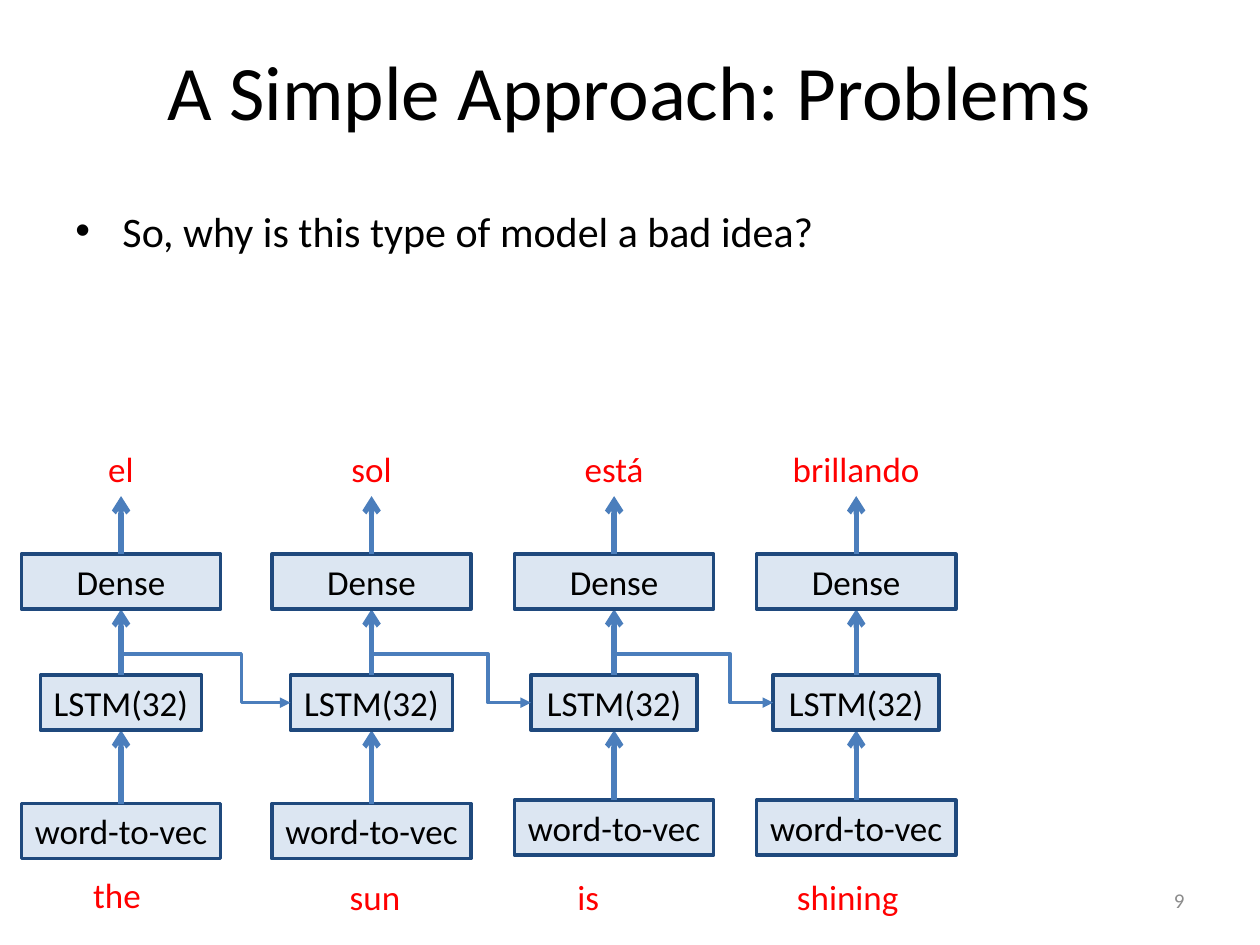
from dataclasses import dataclass

import pptx
import pptx.dml.color
import pptx.enum.shapes
import pptx.enum.text
import pptx.oxml
import pptx.oxml.ns
import pptx.util
from pptx.util import Cm

RGB = pptx.dml.color.RGBColor
ALIGN = pptx.enum.text.PP_ALIGN
ANCHOR = pptx.enum.text.MSO_ANCHOR
FIT = pptx.enum.text.MSO_AUTO_SIZE
LINK = pptx.enum.shapes.MSO_CONNECTOR
RECTANGLE = pptx.enum.shapes.MSO_SHAPE.RECTANGLE


@dataclass(frozen=True)
class Theme:
    font: str = "Calibri"
    ink: RGB = RGB(0x00, 0x00, 0x00)
    word: RGB = RGB(0xFF, 0x00, 0x00)
    muted: RGB = RGB(0x8C, 0x8C, 0x8C)
    layer_fill: RGB = RGB(0xDC, 0xE6, 0xF2)
    layer_line: RGB = RGB(0x1F, 0x49, 0x7D)
    flow: RGB = RGB(0x4B, 0x7E, 0xBC)
    title_size: int = 44
    body_size: int = 24
    label_size: int = 20
    number_size: int = 12


theme = Theme()
deck = pptx.Presentation()
deck.slide_width, deck.slide_height = Cm(25.4), Cm(19.05)
slide = deck.slides.add_slide(deck.slide_layouts[6])


def write(box, text, size, color, align=ALIGN.CENTER, anchor=ANCHOR.TOP, wrap=True):
    frame = box.text_frame
    frame.text = text
    frame.word_wrap = wrap
    frame.vertical_anchor = anchor
    para = frame.paragraphs[0]
    para.alignment = align
    font = para.runs[0].font
    font.name, font.size = theme.font, pptx.util.Pt(size)
    font.color.rgb = color
    return para


def connect(kind, start, end, width, head, bend=None):
    """Draw a flow arrow between two (x, y) points in cm; bend places the elbow, 0 to 1."""
    line = slide.shapes.add_connector(kind, *map(Cm, start + end))
    line.line.color.rgb = theme.flow
    line.line.width = pptx.util.Pt(width)
    properties = line._element.spPr
    tail = pptx.oxml.parse_xml(f'<a:tailEnd {pptx.oxml.ns.nsdecls("a")} type="{head}"/>')
    line.line._get_or_add_ln().append(tail)
    properties.append(pptx.oxml.parse_xml(f'<a:effectLst {pptx.oxml.ns.nsdecls("a")}/>'))
    if bend is not None:
        guides = properties.find(pptx.oxml.ns.qn("a:prstGeom")).get_or_add_avLst()
        guides.append(pptx.oxml.parse_xml(
            f'<a:gd {pptx.oxml.ns.nsdecls("a")} name="adj1" fmla="val {round(bend * 100000)}"/>'))


# Title, question and slide number
title = slide.shapes.add_textbox(Cm(1.27), Cm(0.43), Cm(22.86), Cm(2.74))
write(title, "A Simple Approach: Problems", theme.title_size, theme.ink, anchor=ANCHOR.MIDDLE)

body = slide.shapes.add_textbox(Cm(1.27), Cm(4.01), Cm(22.86), Cm(4.72))
question = write(body, "So, why is this type of model a bad idea?",
                 theme.body_size, theme.ink, ALIGN.LEFT)
question.space_before = pptx.util.Pt(4.8)
bullet = question._p.get_or_add_pPr()
bullet.set("marL", str(Cm(0.95)))
bullet.set("indent", str(-Cm(0.95)))
for tag in ('buFont {} typeface="Arial"', 'buChar {} char="•"'):
    bullet.append(pptx.oxml.parse_xml(f'<a:{tag.format(pptx.oxml.ns.nsdecls("a"))}/>'))

number = slide.shapes.add_textbox(Cm(18.2), Cm(17.65), Cm(5.93), Cm(1.01))
write(number, "9", theme.number_size, theme.muted, ALIGN.RIGHT, ANCHOR.MIDDLE)

# One column per time step, all lengths in cm:
# centre, LSTM width, embedding top, source (word, centre, width, top), target (word, width)
steps = [
    (2.44, 3.25, 16.2, ("the", 2.36, 1.47, 17.48), ("el", 1.04)),
    (7.49, 3.27, 16.2, ("sun", 7.56, 1.55, 17.53), ("sol", 1.32)),
    (12.38, 3.35, 16.13, ("is", 11.86, 0.97, 17.53), ("está", 1.73)),
    (17.26, 3.35, 16.13, ("shining", 17.09, 2.59, 17.53), ("brillando", 3.1)),
]
row_height = 1.11
layer_width = 4.02
target_top, dense_top, lstm_top = 8.89, 11.17, 13.61
branch_y = 13.18
state_y = lstm_top + row_height / 2
bends = [0.71, 0.73, 0.73]

for center, lstm_width, embedding_top, source, target in steps:
    source_word, source_center, source_width, source_top = source
    target_word, target_width = target
    for word, middle, top, width in (
        (source_word, source_center, source_top, source_width),
        (target_word, center, target_top, target_width),
    ):
        label = slide.shapes.add_textbox(Cm(middle - width / 2), Cm(top), Cm(width), Cm(row_height))
        write(label, word, theme.label_size, theme.word, wrap=False)
        label.text_frame.auto_size = FIT.SHAPE_TO_FIT_TEXT

    layers = [
        ("word-to-vec", embedding_top, layer_width, lstm_top),
        ("LSTM(32)", lstm_top, lstm_width, dense_top),
        ("Dense", dense_top, layer_width, target_top),
    ]
    for name, top, width, next_top in layers:
        layer = slide.shapes.add_shape(
            RECTANGLE, Cm(center - width / 2), Cm(top), Cm(width), Cm(row_height))
        layer.shadow.inherit = False
        layer.fill.solid()
        layer.fill.fore_color.rgb = theme.layer_fill
        layer.line.color.rgb = theme.layer_line
        layer.line.width = pptx.util.Pt(2)
        write(layer, name, theme.label_size, theme.ink)
        layer.text_frame.auto_size = FIT.SHAPE_TO_FIT_TEXT
        connect(LINK.STRAIGHT, (center, top), (center, next_top + row_height), 3, "arrow")

# The state of each LSTM passes on to the next step
for step, following, bend in zip(steps, steps[1:], bends):
    lstm_left = following[0] - following[1] / 2
    connect(LINK.ELBOW, (step[0], branch_y), (lstm_left, state_y), 2, "triangle", bend)

deck.save("out.pptx")
